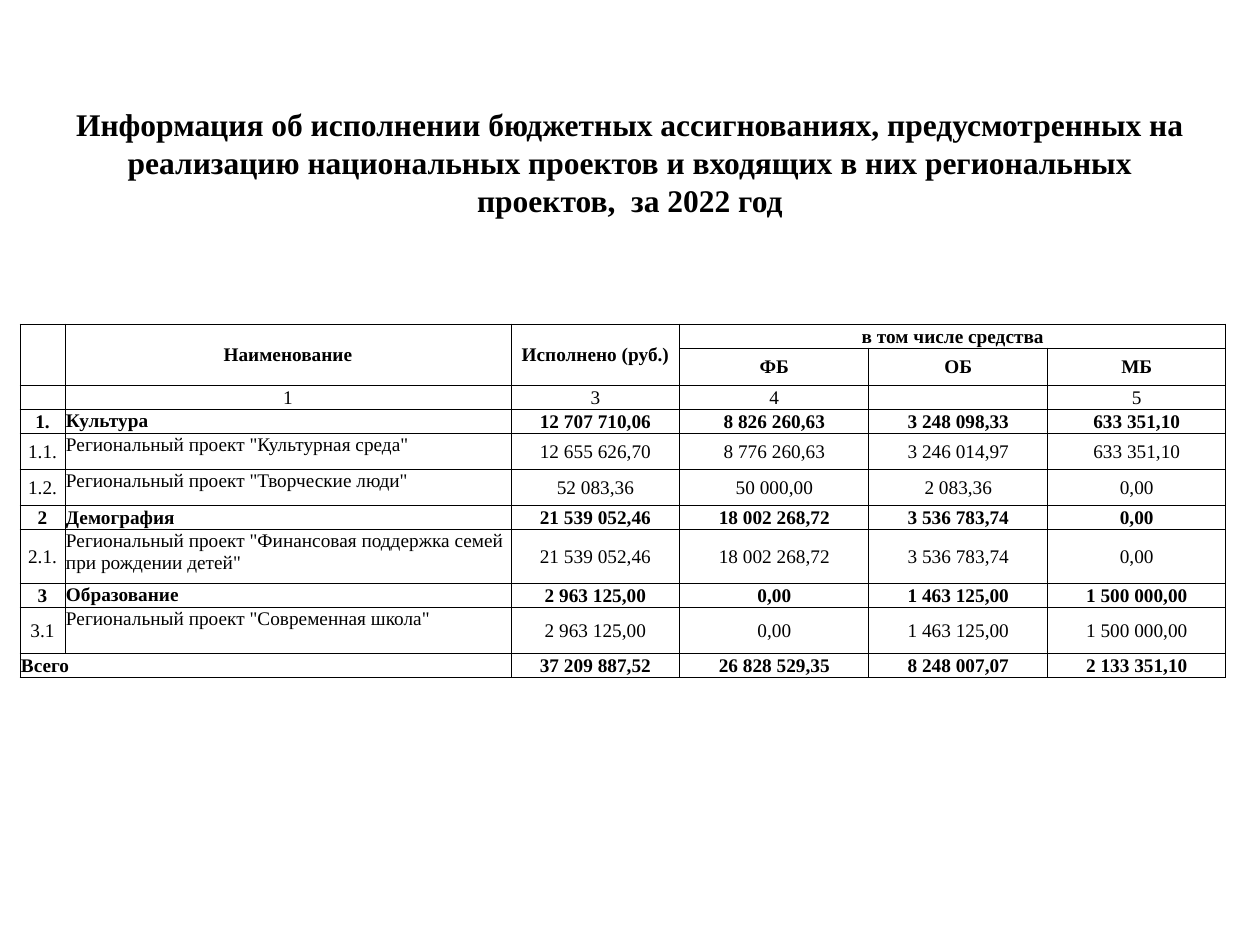
import pptx
import pptx.util
import pptx.dml.color
import pptx.enum.text
import pptx.oxml.ns
from lxml import etree

PX = 914400 // 126
FONT = "Times New Roman"
BLACK = "000000"
CENTER = pptx.enum.text.PP_ALIGN.CENTER
LEFT = pptx.enum.text.PP_ALIGN.LEFT
MIDDLE = pptx.enum.text.MSO_ANCHOR.MIDDLE
TOP = pptx.enum.text.MSO_ANCHOR.TOP

TITLE = ("Информация об исполнении бюджетных ассигнованиях, предусмотренных на "
         "реализацию национальных проектов и входящих в них региональных "
         "проектов,  за 2022 год\v")

COL_WIDTHS = [45, 446, 68, 101, 72, 117, 58, 121, 53, 125]
ROW_HEIGHTS = [38, 38, 22, 37, 22, 22, 36, 36, 23, 54, 22, 46, 22]
SPACER_ROWS = 2
VALUE_COLS = [2, 4, 6, 8]  # each value column spans two grid columns
FIELD_COLS = [0, 1] + VALUE_COLS

HEADER = [
    ["", "Наименование", "Исполнено (руб.)", "в том числе средства", "", ""],
    ["", "", "", "ФБ", "ОБ", "МБ"],
    ["", "1", "3", "4", "", "5"],
]
BODY = [
    ["1.", "Культура", "12 707 710,06", "8 826 260,63", "3 248 098,33", "633 351,10"],
    ["1.1.", 'Региональный проект "Культурная среда"',
     "12 655 626,70", "8 776 260,63", "3 246 014,97", "633 351,10"],
    ["1.2.", 'Региональный проект "Творческие люди"',
     "52 083,36", "50 000,00", "2 083,36", "0,00"],
    ["2", "Демография", "21 539 052,46", "18 002 268,72", "3 536 783,74", "0,00"],
    ["2.1.", 'Региональный проект "Финансовая поддержка семей при рождении детей"',
     "21 539 052,46", "18 002 268,72", "3 536 783,74", "0,00"],
    ["3", "Образование", "2 963 125,00", "0,00", "1 463 125,00", "1 500 000,00"],
    ["3.1", 'Региональный проект "Современная школа"',
     "2 963 125,00", "0,00", "1 463 125,00", "1 500 000,00"],
    ["Всего", "", "37 209 887,52", "26 828 529,35", "8 248 007,07", "2 133 351,10"],
]
BOLD_ROWS = {2, 3, 5, 8, 10, 12}
FIRST_BODY_ROW = SPACER_ROWS + len(HEADER)
TOTAL_ROW = len(ROW_HEIGHTS) - 1


def px(n):
    return pptx.util.Emu(n * PX)


def rgb(color):
    return pptx.dml.color.RGBColor.from_string(color)


def style_paragraph(p, size, bold, align):
    p.alignment = align
    p.font.name = FONT
    p.font.size = pptx.util.Pt(size)
    p.font.bold = bold
    p.font.color.rgb = rgb(BLACK)


def add_title(slide):
    sp = slide.shapes.add_textbox(px(63), px(38), px(1134), px(286))
    tf = sp.text_frame
    tf.word_wrap = True
    tf.vertical_anchor = MIDDLE
    p = tf.paragraphs[0]
    p.text = TITLE
    style_paragraph(p, 18, True, CENTER)


def set_borders(cell, sides):
    """Draw the named sides (of L, R, T, B) and clear the others."""
    qn = pptx.oxml.ns.qn
    tc_pr = cell._tc.get_or_add_tcPr()
    for side in "LRTB":
        ln = etree.SubElement(tc_pr, qn("a:ln" + side), w=str(pptx.util.Pt(0.5)))
        if side in sides:
            fill = etree.SubElement(ln, qn("a:solidFill"))
            etree.SubElement(fill, qn("a:srgbClr"), val=BLACK)
        else:
            etree.SubElement(ln, qn("a:noFill"))


def style_cell(cell, row, col):
    sides = "LRTB" if row >= SPACER_ROWS else "B" if row == SPACER_ROWS - 1 else ""
    set_borders(cell, sides)
    cell.fill.background()
    cell.margin_left = cell.margin_right = cell.margin_top = px(1)
    cell.margin_bottom = 0

    is_name = row >= FIRST_BODY_ROW and col == 1
    is_left = is_name or (row, col) == (TOTAL_ROW, 0)
    cell.vertical_anchor = TOP if is_name and cell.text != "Демография" else MIDDLE
    p = cell.text_frame.paragraphs[0]
    style_paragraph(p, 11, row in BOLD_ROWS, LEFT if is_left else CENTER)
    if not cell.text:
        # Keeps an empty cell from stretching its row
        etree.SubElement(p._p, pptx.oxml.ns.qn("a:endParaRPr"), sz="1100")


def merge_cells(table):
    spans = [(0, c, 0, c + 1) for c in (1, 3, 5, 7)]              # spacer rows
    spans += [(1, 2, 1, 3), (1, 4, 1, 6), (1, 7, 1, 8)]
    spans += [(2, 0, 3, 0), (2, 1, 3, 1), (2, 2, 3, 3), (2, 4, 2, 9)]  # header
    spans += [(3, c, 3, c + 1) for c in VALUE_COLS[1:]]
    spans += [(r, c, r, c + 1) for r in range(4, TOTAL_ROW + 1) for c in VALUE_COLS]
    spans.append((TOTAL_ROW, 0, TOTAL_ROW, 1))
    for top, left, bottom, right in spans:
        table.cell(top, left).merge(table.cell(bottom, right))


def add_budget_table(slide):
    frame = slide.shapes.add_table(len(ROW_HEIGHTS), len(COL_WIDTHS), px(20), px(248),
                                   px(sum(COL_WIDTHS)), px(sum(ROW_HEIGHTS)))
    table = frame.table
    table.first_row = table.horz_banding = False
    for column, width in zip(table.columns, COL_WIDTHS):
        column.width = px(width)
    for row, height in zip(table.rows, ROW_HEIGHTS):
        row.height = px(height)

    for r, fields in enumerate(HEADER + BODY, SPACER_ROWS):
        for c, text in zip(FIELD_COLS, fields):
            if text:
                table.cell(r, c).text = text
    for r in range(len(ROW_HEIGHTS)):
        for c in range(len(COL_WIDTHS)):
            style_cell(table.cell(r, c), r, c)
    merge_cells(table)


def main():
    prs = pptx.Presentation()
    prs.slide_width, prs.slide_height = px(1260), px(945)
    slide = prs.slides.add_slide(prs.slide_layouts[6])
    add_title(slide)
    add_budget_table(slide)
    prs.save("out.pptx")


if __name__ == "__main__":
    main()
